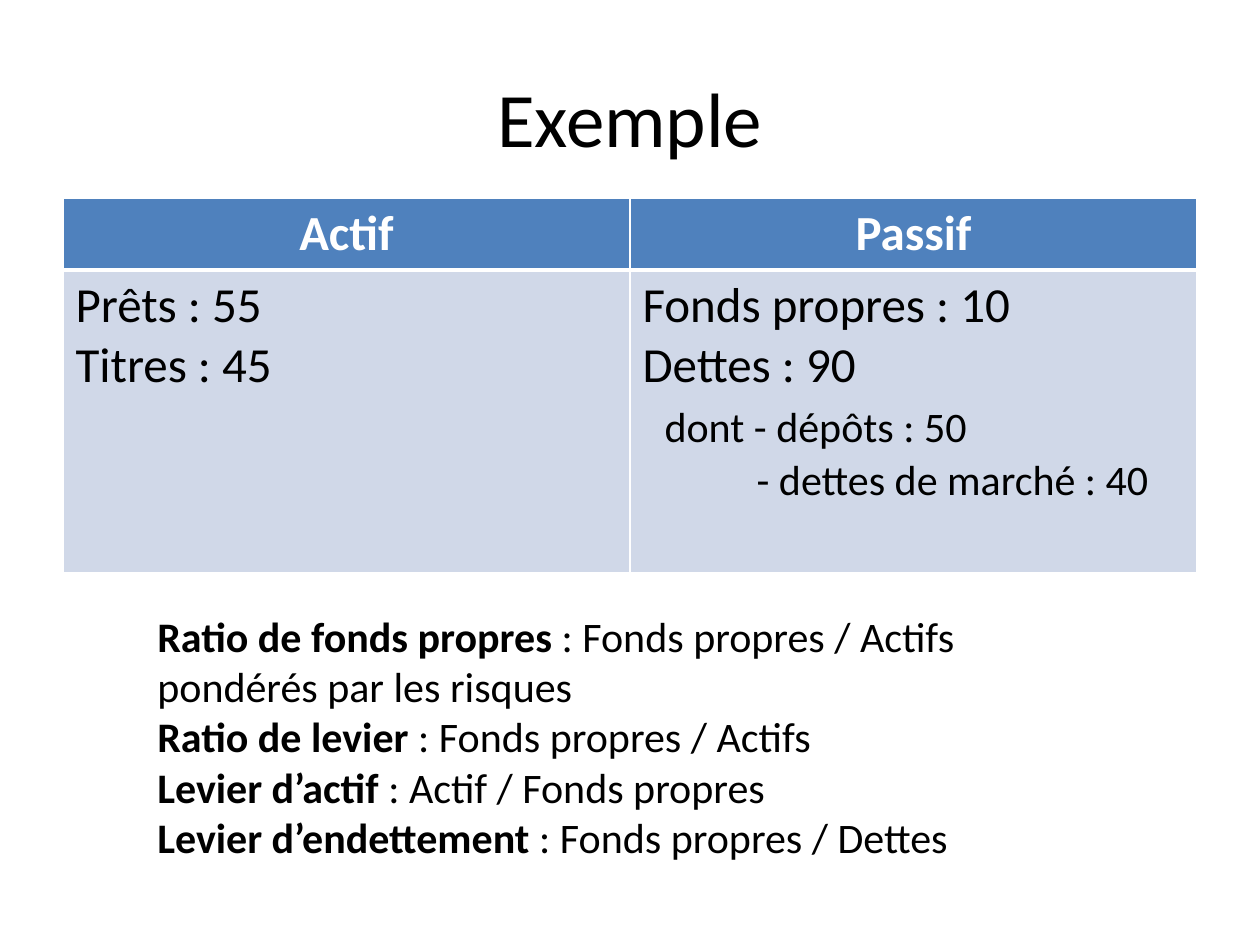
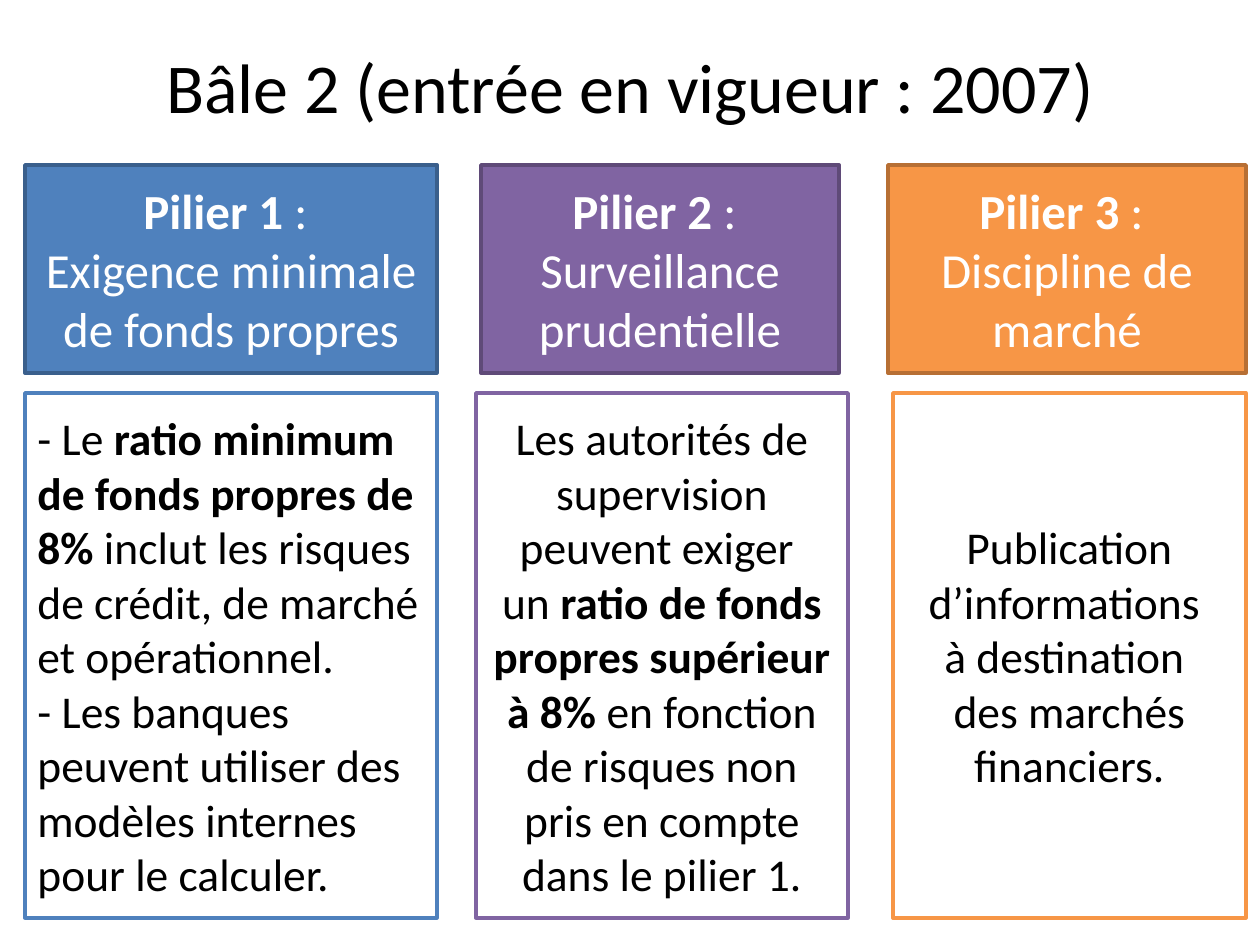
from dataclasses import dataclass

from lxml import etree
from pptx import Presentation
from pptx.dml.color import RGBColor
from pptx.enum.shapes import MSO_SHAPE as SHAPE
from pptx.enum.text import MSO_ANCHOR as ANCHOR, PP_ALIGN as ALIGN
from pptx.oxml.ns import qn
from pptx.util import Pt

EMU_PER_PX = 914400 / 126


@dataclass(frozen=True)
class Theme:
    font: str = "Calibri"
    black: str = "000000"
    white: str = "FFFFFF"
    blue: str = "4F81BD"
    blue_edge: str = "3A5F8C"
    purple: str = "8064A2"
    purple_edge: str = "5F4A78"
    orange: str = "F79646"
    orange_edge: str = "B76F34"
    pale_blue: str = "D0D8E8"
    title: int = 44
    long_title: int = 40
    heading: int = 28
    body: int = 26
    detail: int = 24
    edge: int = 2
    thin_rule: int = 1
    thick_rule: int = 3


theme = Theme()


def px(*lengths):
    return [round(length * EMU_PER_PX) for length in lengths]


def write(frame, lines, size, color=theme.black, align=ALIGN.LEFT, anchor=ANCHOR.TOP):
    """Fill a text frame, one paragraph a line; text between asterisks is bold."""
    frame.word_wrap = True
    frame.vertical_anchor = anchor
    for number, line in enumerate(lines):
        para = frame.paragraphs[0] if number == 0 else frame.add_paragraph()
        para.alignment = align
        for part, text in enumerate(line.split("*")):
            if text:
                span = para.add_run()
                span.text = text
                span.font.name = theme.font
                span.font.size = Pt(size)
                span.font.bold = part % 2 == 1
                span.font.color.rgb = RGBColor.from_string(color)


deck = Presentation()
deck.slide_width, deck.slide_height = px(1260, 945)

# Titles
pages = []
for title, top, size in [
    ("Exemple", 38, theme.title),
    ("Bâle 2 (entrée en vigueur : 2007)", 6, theme.long_title),
]:
    page = deck.slides.add_slide(deck.slide_layouts[6])
    box = page.shapes.add_textbox(*px(63, top, 1134, 158))
    write(box.text_frame, [title], size, align=ALIGN.CENTER, anchor=ANCHOR.MIDDLE)
    pages.append(page)
example_page, pillars_page = pages

# Slide 1: balance sheet
balance = example_page.shapes.add_table(2, 2, *px(63, 198, 1134, 375)).table
balance.first_row = balance.horz_banding = False
for row, height in zip(balance.rows, px(72, 303)):
    row.height = height

sheet = [
    [["*Actif*"], ["*Passif*"]],
    [
        ["Prêts : 55", "Titres : 45"],
        ["Fonds propres : 10", "Dettes : 90", "dont - dépôts : 50", "- dettes de marché : 40"],
    ],
]
for row, entries in enumerate(sheet):
    is_header = row == 0
    for column, lines in enumerate(entries):
        cell = balance.cell(row, column)
        cell.fill.solid()
        cell.fill.fore_color.rgb = RGBColor.from_string(theme.blue if is_header else theme.pale_blue)
        write(
            cell.text_frame,
            lines,
            theme.heading,
            color=theme.white if is_header else theme.black,
            align=ALIGN.CENTER if is_header else ALIGN.LEFT,
        )
        cell_format = cell._tc.get_or_add_tcPr()
        thick_side = "lnB" if is_header else "lnT"
        for position, side in enumerate(["lnL", "lnR", "lnT", "lnB"]):
            width = theme.thick_rule if side == thick_side else theme.thin_rule
            rule = etree.Element(qn(f"a:{side}"), w=str(Pt(width)))
            fill = etree.SubElement(rule, qn("a:solidFill"))
            etree.SubElement(fill, qn("a:srgbClr"), val=theme.white)
            cell_format.insert(position, rule)

debt_details = balance.cell(1, 1).text_frame.paragraphs[2:]
for para, indent, space_before in zip(debt_details, px(22, 114), (4, 1)):
    para._p.get_or_add_pPr().set("marL", str(indent))
    para.space_before = Pt(space_before)
    para.runs[0].font.size = Pt(theme.detail)

# Slide 1: ratio definitions
ratios = [
    "*Ratio de fonds propres *: Fonds propres / Actifs pondérés par les risques",
    "*Ratio de levier *: Fonds propres / Actifs",
    "*Levier d’actif* : Actif / Fonds propres",
    "*Levier d’endettement *: Fonds propres / Dettes",
]
box = example_page.shapes.add_textbox(*px(145, 604, 956, 267))
write(box.text_frame, ratios, theme.detail)

# Slide 2: three pillars, each with a heading box above a description box
pillars = [
    (
        theme.blue, theme.blue_edge, (25, 412), (25, 412), ALIGN.LEFT,
        "Exigence minimale de fonds propres",
        [
            "- Le *ratio minimum de fonds propres de 8%* inclut les risques de crédit, "
            "de marché et opérationnel.",
            "- Les banques peuvent utiliser des modèles internes pour le calculer.",
        ],
    ),
    (
        theme.purple, theme.purple_edge, (481, 358), (476, 372), ALIGN.CENTER,
        "Surveillance prudentielle",
        [
            "Les autorités de supervision",
            "peuvent exiger ",
            "un *ratio de fonds propres supérieur à 8% *en fonction de risques non "
            "pris en compte dans le pilier 1.",
        ],
    ),
    (
        theme.orange, theme.orange_edge, (888, 358), (893, 353), ALIGN.CENTER,
        "Discipline de marché",
        ["Publication d’informations ", "à destination ", "des marchés financiers."],
    ),
]
for number, pillar in enumerate(pillars, start=1):
    color, edge, heading_span, body_span, body_align, name, description = pillar
    heading = [f"*Pilier {number} *: ", name]
    for (left, width), top, height, fill, line, lines, size, ink, align in [
        (heading_span, 165, 208, color, edge, heading, theme.heading, theme.white, ALIGN.CENTER),
        (body_span, 393, 525, theme.white, color, description, theme.body, theme.black, body_align),
    ]:
        box = pillars_page.shapes.add_shape(SHAPE.RECTANGLE, *px(left, top, width, height))
        box.shadow.inherit = False
        box.fill.solid()
        box.fill.fore_color.rgb = RGBColor.from_string(fill)
        box.line.color.rgb = RGBColor.from_string(line)
        box.line.width = Pt(theme.edge)
        write(box.text_frame, lines, size, color=ink, align=align, anchor=ANCHOR.MIDDLE)

deck.save("out.pptx")
